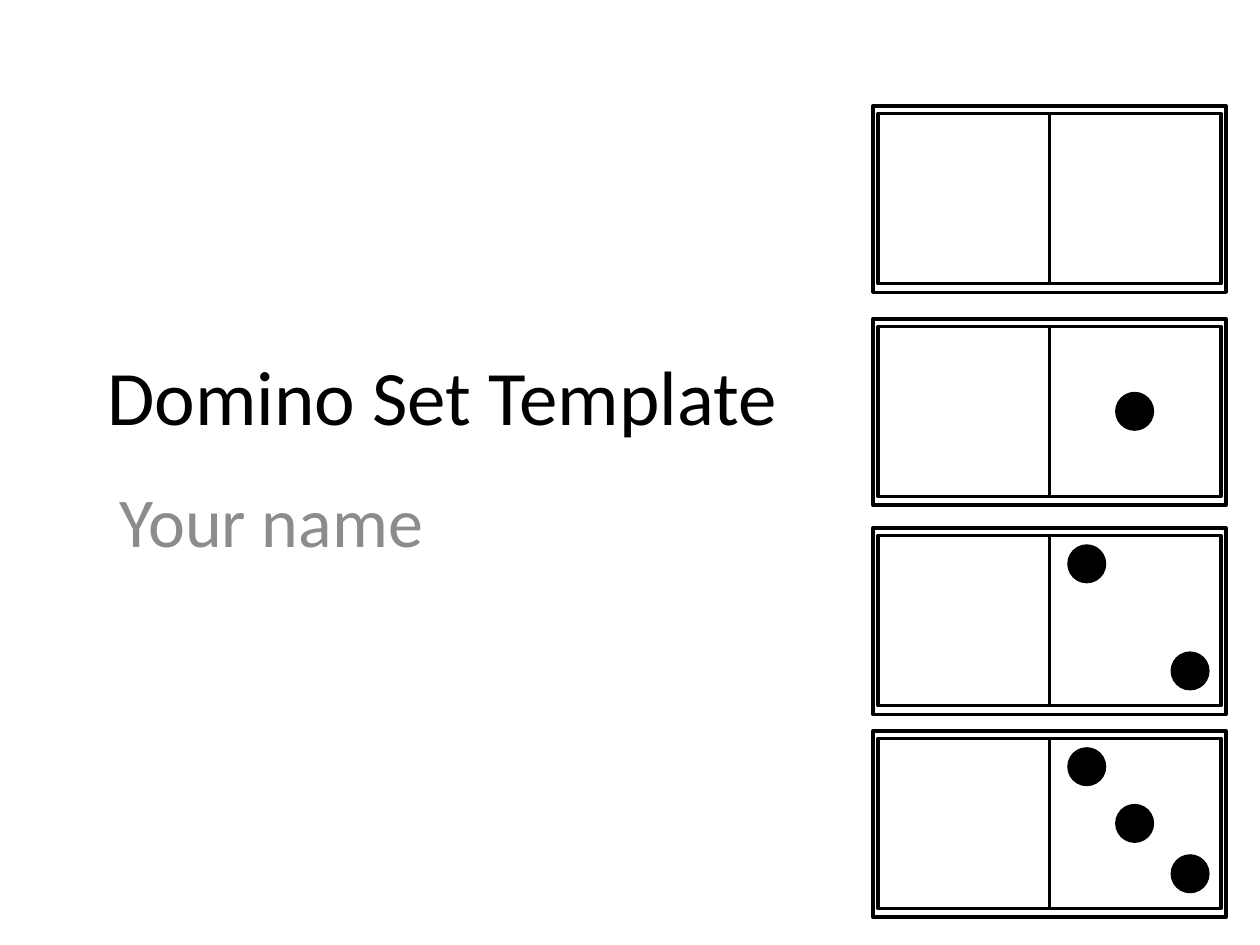
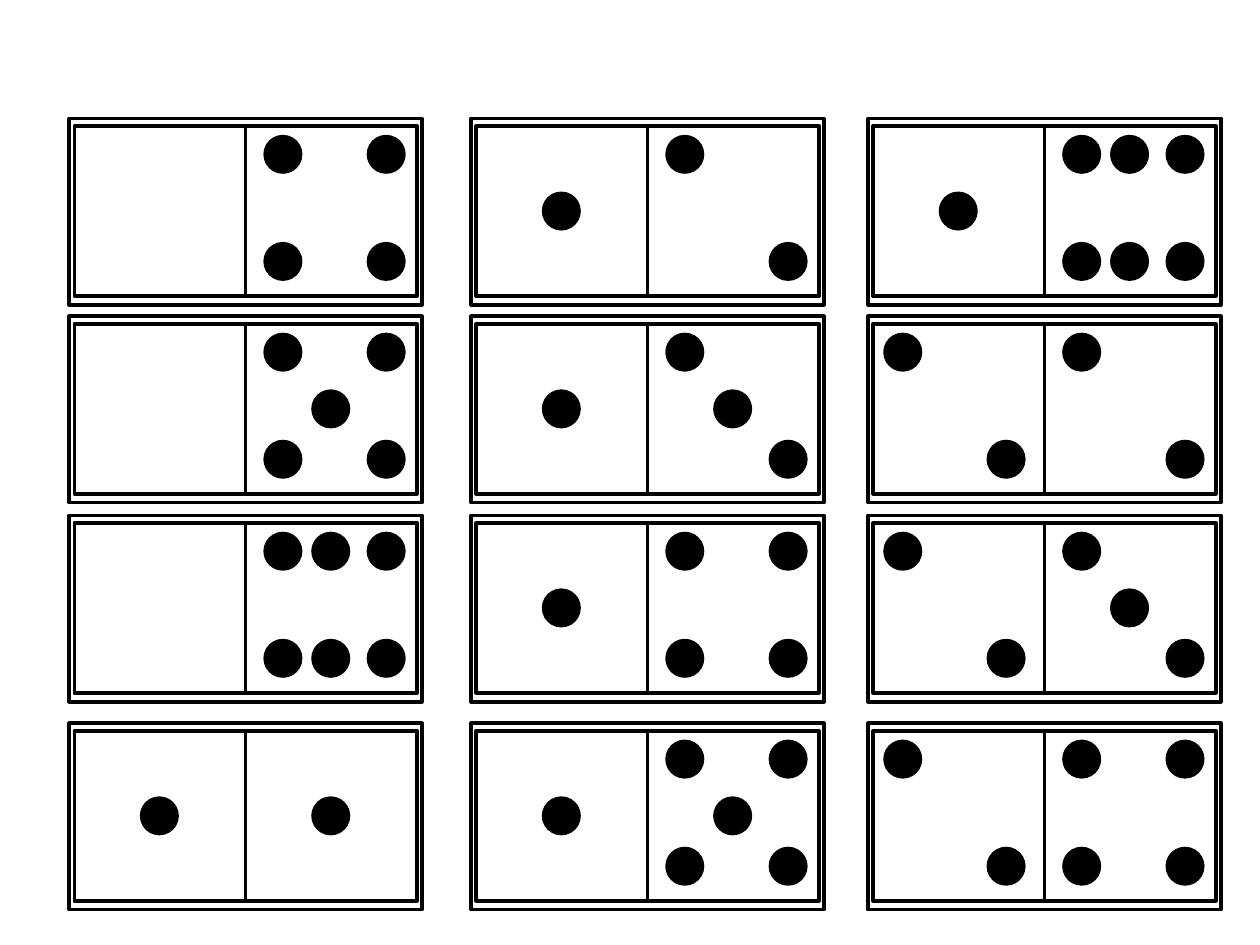
"""Build two slides that show a set of dominoes."""
from typing import NamedTuple

from pptx import Presentation
from pptx.dml.color import RGBColor
from pptx.enum.shapes import MSO_SHAPE
from pptx.enum.text import MSO_ANCHOR, PP_ALIGN
from pptx.util import Emu, Pt

EMU_PER_PX = 9144
FONT = "Calibri"
BLACK, WHITE, GREY = "000000", "FFFFFF", "8C8C8C"
TILE_WIDTH, TILE_HEIGHT = 280, 148
HALF_WIDTH, HALF_HEIGHT = 136, 135
INSET_X, INSET_Y = 4, 6
PIP_SIZE = 31
PIP_ROWS = (7, 52, 92)

DIAGONAL = [(0, 0), (2, 2)]
CORNERS = DIAGONAL + [(0, 2), (2, 0)]
CENTRE = [(1, 1)]
PIP_CELLS = {
    0: [],
    1: CENTRE,
    2: DIAGONAL,
    3: DIAGONAL + CENTRE,
    4: CORNERS,
    5: CORNERS + CENTRE,
    6: CORNERS + [(1, 0), (1, 2)],
}


class Box(NamedTuple):
    left: int
    top: int
    width: int
    height: int


class Half(NamedTuple):
    left: int
    pip_columns: tuple[int, int, int]


class Domino(NamedTuple):
    left: int
    top: int
    values: tuple[int, int]


HALVES = (
    Half(INSET_X, (8, 52, 90)),
    Half(INSET_X + HALF_WIDTH, (14, 52, 96)),
)

COVER_DOMINOES = [
    Domino(693, top, (0, value))
    for value, top in enumerate((84, 253, 419, 580))
]

SET_COLUMNS = {
    55: [(0, 4), (0, 5), (0, 6), (1, 1)],
    374: [(1, 2), (1, 3), (1, 4), (1, 5)],
    689: [(1, 6), (2, 2), (2, 3), (2, 4)],
}
SET_TOPS = (94, 251, 409, 574)
SET_DOMINOES = [
    Domino(left, top, values)
    for left, column in SET_COLUMNS.items()
    for top, values in zip(SET_TOPS, column)
]


def px(length: int) -> Emu:
    """Convert pixels to EMU."""
    return Emu(length * EMU_PER_PX)


def color(value: str) -> RGBColor:
    """Convert a hex string to a colour."""
    return RGBColor.from_string(value)


def place(box: Box) -> list[Emu]:
    """Return the position and size of a box in EMU."""
    return [px(length) for length in box]


def add_rectangle(shapes, box: Box) -> None:
    """Draw a white rectangle with a black outline."""
    shape = shapes.add_shape(MSO_SHAPE.RECTANGLE, *place(box))
    shape.shadow.inherit = False
    shape.fill.solid()
    shape.fill.fore_color.rgb = color(WHITE)
    shape.line.color.rgb = color(BLACK)
    shape.line.width = Pt(2)


def add_pip(shapes, left: int, top: int) -> None:
    """Draw one black pip."""
    box = Box(left, top, PIP_SIZE, PIP_SIZE)
    shape = shapes.add_shape(MSO_SHAPE.OVAL, *place(box))
    shape.shadow.inherit = False
    shape.fill.solid()
    shape.fill.fore_color.rgb = color(BLACK)
    shape.line.fill.background()


def add_domino(slide, domino: Domino) -> None:
    """Draw one domino as a group of frame, halves and pips."""
    shapes = slide.shapes.add_group_shape().shapes
    add_rectangle(shapes, Box(domino.left, domino.top, TILE_WIDTH, TILE_HEIGHT))
    top = domino.top + INSET_Y
    for half, value in zip(HALVES, domino.values):
        left = domino.left + half.left
        add_rectangle(shapes, Box(left, top, HALF_WIDTH, HALF_HEIGHT))
        for column, row in PIP_CELLS[value]:
            add_pip(shapes, left + half.pip_columns[column], top + PIP_ROWS[row])


def write_text(shape, text: str, size: int, text_color: str, anchor: MSO_ANCHOR) -> None:
    """Fill a shape with one left-aligned paragraph."""
    frame = shape.text_frame
    frame.word_wrap = True
    frame.vertical_anchor = anchor
    frame.text = text
    paragraph = frame.paragraphs[0]
    paragraph.alignment = PP_ALIGN.LEFT
    paragraph.font.name = FONT
    paragraph.font.size = Pt(size)
    paragraph.font.color.rgb = color(text_color)


def build_cover(presentation) -> None:
    """Add the title slide with the first four dominoes."""
    slide = presentation.slides.add_slide(presentation.slide_layouts[5])
    for domino in COVER_DOMINOES:
        add_domino(slide, domino)
    title = slide.shapes.title
    title.left, title.top, title.width, title.height = place(Box(75, 233, 850, 161))
    write_text(title, "Domino Set Template", 44, BLACK, MSO_ANCHOR.MIDDLE)
    subtitle = slide.shapes.add_textbox(*place(Box(85, 374, 510, 192)))
    write_text(subtitle, "Your name", 40, GREY, MSO_ANCHOR.TOP)


def build_set(presentation) -> None:
    """Add the slide with the grid of dominoes."""
    slide = presentation.slides.add_slide(presentation.slide_layouts[6])
    for domino in SET_DOMINOES:
        add_domino(slide, domino)


def main() -> None:
    """Build and save the presentation."""
    presentation = Presentation()
    presentation.slide_width, presentation.slide_height = px(1000), px(750)
    build_cover(presentation)
    build_set(presentation)
    presentation.save("out.pptx")


if __name__ == "__main__":
    main()
